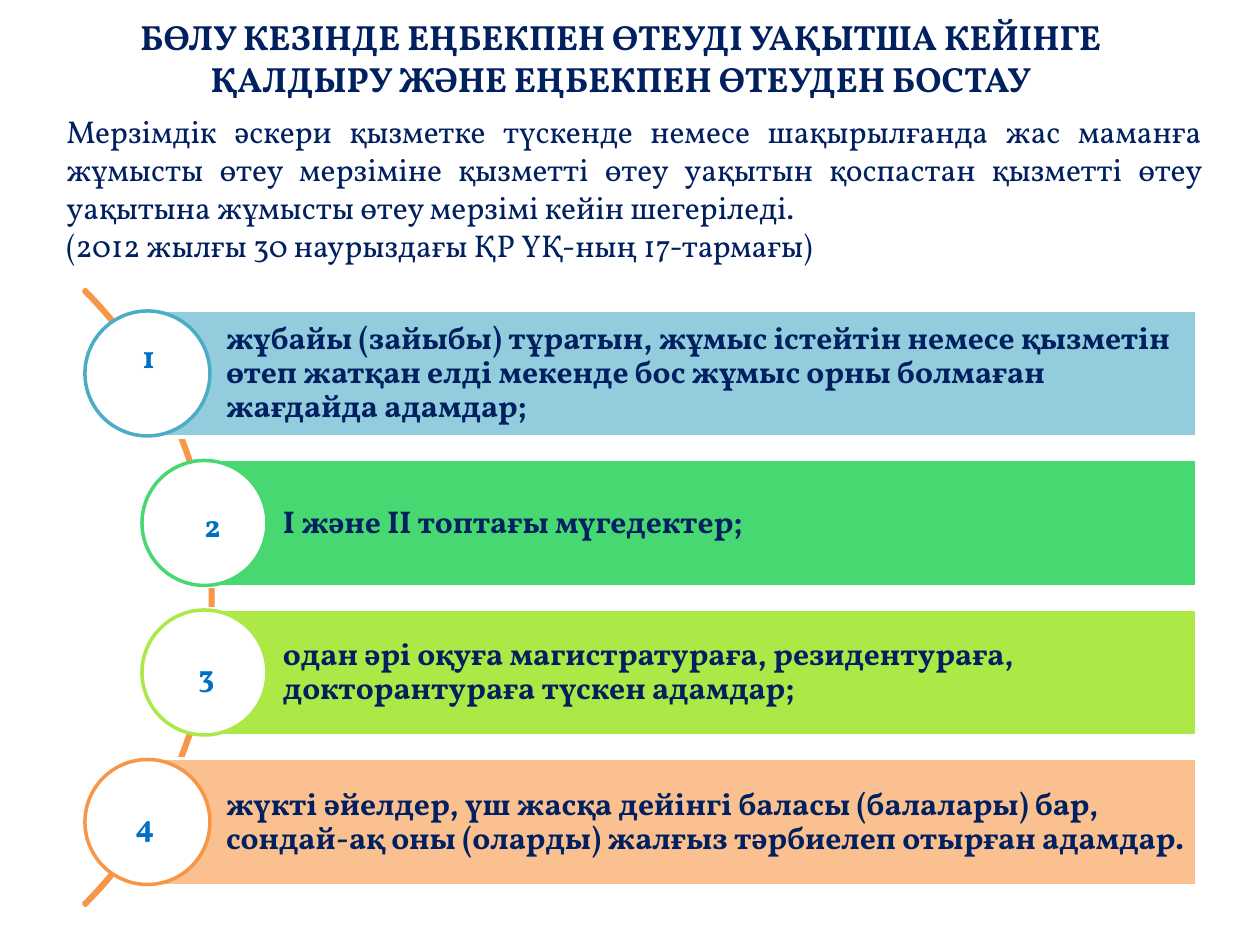
from pptx import Presentation
from pptx.dml.color import RGBColor
from pptx.enum.shapes import MSO_SHAPE
from pptx.enum.text import MSO_ANCHOR, MSO_AUTO_SIZE, PP_ALIGN
from pptx.util import Emu, Pt

PX_PER_INCH = 126
FONT = "Vollkorn"
NAVY, BLUE, ORANGE, WHITE = "002060", "0070C0", "F79646", "FFFFFF"


def px(n):
    return Emu(round(n * 914400 / PX_PER_INCH))


def color(hex_string):
    return RGBColor.from_string(hex_string)


def write(tf, *paragraphs, size=18, fill=NAVY, bold=True, align=PP_ALIGN.LEFT,
          anchor=MSO_ANCHOR.TOP, wrap=True, spacing=None):
    tf.auto_size = MSO_AUTO_SIZE.NONE
    tf.word_wrap = wrap
    tf.vertical_anchor = anchor
    for i, text in enumerate(paragraphs):
        p = tf.paragraphs[0] if i == 0 else tf.add_paragraph()
        p.alignment = align
        p.line_spacing = spacing
        r = p.add_run()
        r.text = text
        r.font.name = FONT
        r.font.size = Pt(size)
        r.font.bold = bold
        r.font.color.rgb = color(fill)


class Deck:
    """Holds the presentation, its line width and the current slide."""

    def __init__(self, width, height):
        self.prs = Presentation()
        self.prs.slide_width, self.prs.slide_height = px(width), px(height)
        self.line_width = Pt(2)
        self.slide = None

    def new_slide(self):
        self.slide = self.prs.slides.add_slide(self.prs.slide_layouts[5])

    def title(self, text, x, y, w, h):
        sp = self.slide.shapes.title
        sp.left, sp.top, sp.width, sp.height = map(px, (x, y, w, h))
        write(sp.text_frame, text, size=20, align=PP_ALIGN.CENTER,
              anchor=MSO_ANCHOR.MIDDLE)

    def text(self, paragraphs, x, y, w, h, **style):
        sp = self.slide.shapes.add_textbox(*map(px, (x, y, w, h)))
        write(sp.text_frame, *paragraphs, **style)

    def shape(self, kind, x, y, w, h, line, fill=None):
        sp = self.slide.shapes.add_shape(kind, *map(px, (x, y, w, h)))
        sp.shadow.inherit = False
        if fill:
            sp.fill.solid()
            sp.fill.fore_color.rgb = color(fill)
        else:
            sp.fill.background()
        sp.line.color.rgb = color(line)
        sp.line.width = self.line_width
        return sp

    def arc(self, x, y, size):
        """Thin arc open to the left, from -45 to 45 degrees."""
        sp = self.shape(MSO_SHAPE.BLOCK_ARC, x, y, size, size, ORANGE)
        for i, value in enumerate((189, 27, 0.003)):
            sp.adjustments[i] = value

    def bar(self, text, x, y, w, h, fill):
        sp = self.shape(MSO_SHAPE.RECTANGLE, x, y, w, h, WHITE, fill)
        tf = sp.text_frame
        tf.margin_left = px(79)
        tf.margin_right = tf.margin_top = tf.margin_bottom = px(6)
        write(tf, text, anchor=MSO_ANCHOR.MIDDLE, spacing=0.9)

    def circle(self, x, y, size, line):
        self.shape(MSO_SHAPE.OVAL, x, y, size, size, line, WHITE)


BAR_TOP, BAR_RIGHT, BAR_HEIGHT, BAR_PITCH = 310, 1197, 127, 149.5
CIRCLE = 125

# text, bar left, bar fill, circle line, number position
ITEMS = [
    ("жұбайы (зайыбы) тұратын, жұмыс істейтін немесе қызметін өтеп жатқан "
     "елді мекенде бос жұмыс орны болмаған жағдайда адамдар;",
     147, "93CDDD", "4BACC6", (130, 331)),
    ("І және II топтағы мүгедектер;",
     204, "47D872", "47D872", (192, 500)),
    ("одан әрі оқуға магистратураға, резидентураға, докторантураға түскен "
     "адамдар;",
     204, "ACE946", "ACE946", (186, 650)),
    ("жүкті әйелдер, үш жасқа дейінгі баласы (балалары) бар, сондай-ақ оны "
     "(оларды) жалғыз тәрбиелеп отырған адамдар.",
     147, "FAC090", ORANGE, (123, 800)),
]


def main():
    deck = Deck(1260, 945)
    deck.new_slide()
    deck.title("БӨЛУ КЕЗІНДЕ ЕҢБЕКПЕН ӨТЕУДІ УАҚЫТША КЕЙІНГЕ ҚАЛДЫРУ ЖӘНЕ "
               "ЕҢБЕКПЕН ӨТЕУДЕН БОСТАУ", 54, 9, 1134, 97)
    deck.arc(-658, 162, 871)

    for i, (text, left, fill, line, _) in enumerate(ITEMS):
        top = BAR_TOP + i * BAR_PITCH
        deck.bar(text, left, top, BAR_RIGHT - left, BAR_HEIGHT, fill)
        deck.circle(left - CIRCLE // 2, top + 1, CIRCLE, line)

    for number, (*_, (x, y)) in enumerate(ITEMS, 1):
        deck.text([str(number)], x, y, 42, 50, fill=BLUE, wrap=False)

    deck.text(["Мерзімдік әскери қызметке түскенде немесе шақырылғанда жас "
               "маманға жұмысты өтеу мерзіміне қызметті өтеу уақытын қоспастан "
               "қызметті өтеу уақытына жұмысты өтеу мерзімі кейін шегеріледі.",
               "(2012 жылғы 30 наурыздағы ҚР ҮҚ-ның 17-тармағы)"],
              54, 106, 1160, 165, bold=False, align=PP_ALIGN.JUSTIFY)
    deck.prs.save("out.pptx")


if __name__ == "__main__":
    main()
